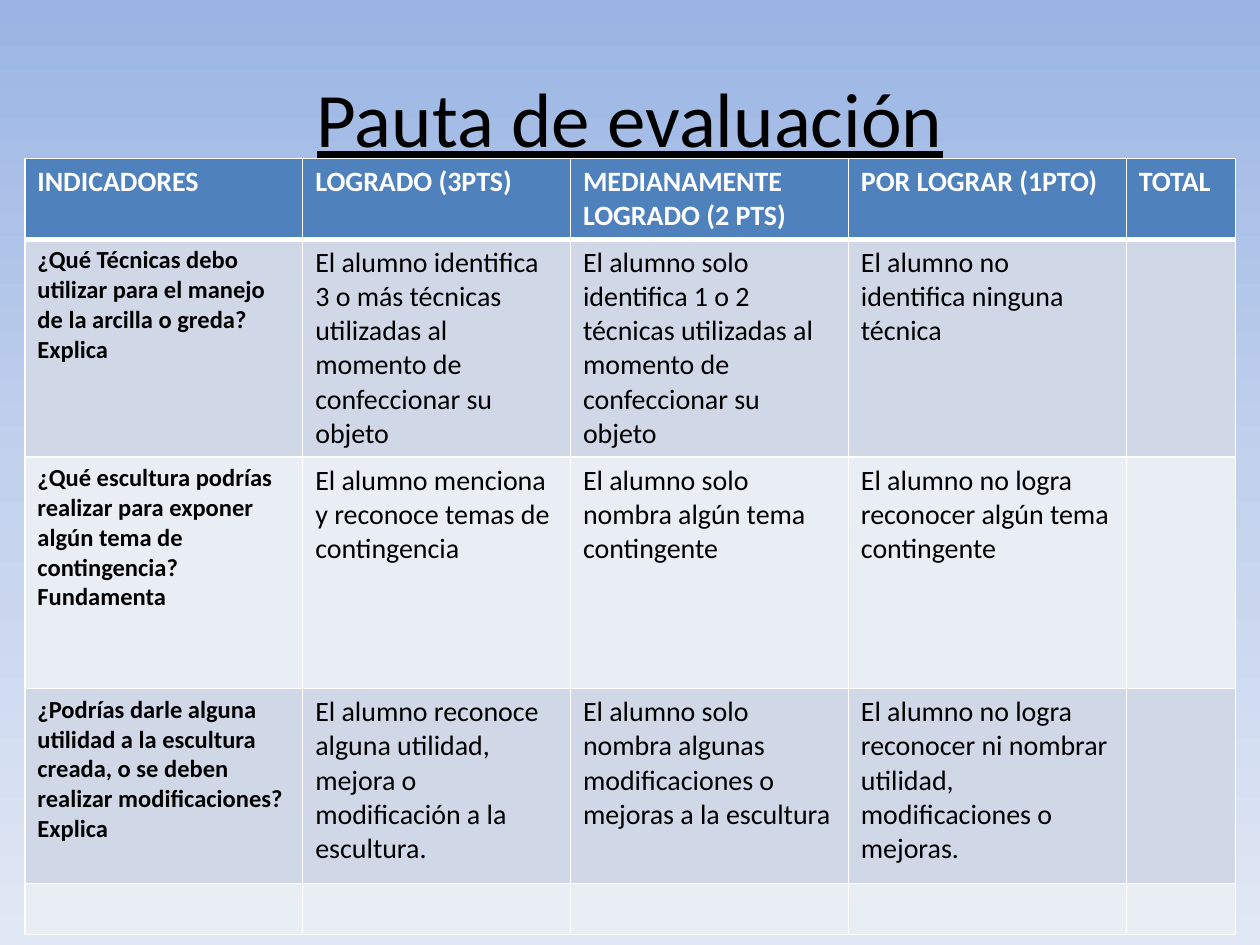
from typing import NamedTuple

from lxml import etree
from pptx import Presentation
from pptx import util as u
from pptx.dml.color import RGBColor
from pptx.enum import text
from pptx.oxml import ns

FONT = "Calibri"
WHITE, BLACK = "FFFFFF", "000000"
HEAD, DARK, LIGHT = "4F81BD", "D0D8E8", "E9EDF4"
SKY = [(0, "9AB5E4"), (50, "C2D1ED"), (100, "E1E8F5")]
COLS = [158.8, 153, 158.8, 158.8, 62.4]


class Style(NamedTuple):
    size: float
    bold: bool = False
    ink: str = BLACK
    line: bool = False


class Row(NamedTuple):
    height: float
    fill: str
    words: list[str]


TITLE = Style(44, line=True)
TOP = Style(16, True, WHITE)
ASK = Style(14, True)
BODY = Style(16)

ROWS = [
    Row(46, HEAD, ["INDICADORES", "LOGRADO (3PTS)", "MEDIANAMENTE LOGRADO (2 PTS)",
                   "POR LOGRAR (1PTO)", "TOTAL"]),
    Row(124.5, DARK, [
        "¿Qué Técnicas debo utilizar para el manejo de la arcilla o greda? Explica",
        "El alumno identifica 3 o más técnicas utilizadas al momento de confeccionar su objeto",
        "El alumno solo identifica 1 o 2 técnicas utilizadas al momento de confeccionar su objeto",
        "El alumno no identifica ninguna técnica", ""]),
    Row(132.3, LIGHT, [
        "¿Qué escultura podrías realizar para exponer algún tema de contingencia? Fundamenta",
        "El alumno menciona y reconoce temas de contingencia",
        "El alumno solo nombra algún tema contingente",
        "El alumno no logra reconocer algún tema contingente", ""]),
    Row(111.5, DARK, [
        "¿Podrías darle alguna utilidad a la escultura creada, o se deben realizar"
        " modificaciones? Explica",
        "El alumno reconoce alguna utilidad, mejora o modificación a la escultura.",
        "El alumno solo nombra algunas modificaciones o mejoras a la escultura",
        "El alumno no logra reconocer ni nombrar utilidad, modificaciones o mejoras.", ""]),
    Row(29, LIGHT, [""] * 5),
]


def color(code: str) -> RGBColor:
    return RGBColor.from_string(code)


def node(parent, tag: str, **attrs: str):
    return etree.SubElement(parent, ns.qn(tag), **attrs)


def write(para, words: str, style: Style) -> None:
    run = para.add_run()
    run.text = words
    font = run.font
    font.name, font.size = FONT, u.Pt(style.size)
    font.bold, font.underline = style.bold, style.line
    font.color.rgb = color(style.ink)


def paint(slide) -> None:
    """Fill the background with a top-down gradient."""
    fill = slide.background.fill
    fill.gradient()
    fill.gradient_angle = 270
    stops = next(slide.element.iter(ns.qn("a:gsLst")))
    stops.clear()
    for place, code in SKY:
        stop = node(stops, "a:gs", pos=str(place * 1000))
        node(stop, "a:srgbClr", val=code)


def edge(cell, side: str, width: float) -> None:
    line = node(cell._tc.get_or_add_tcPr(), f"a:ln{side}", w=str(u.Pt(width)))
    node(node(line, "a:solidFill"), "a:srgbClr", val=WHITE)


def head(slide) -> None:
    box = slide.shapes.add_textbox(u.Pt(36), u.Pt(21.6), u.Pt(648), u.Pt(90))
    frame = box.text_frame
    frame.word_wrap = True
    frame.vertical_anchor = text.MSO_ANCHOR.MIDDLE
    para = frame.paragraphs[0]
    para.alignment = text.PP_ALIGN.CENTER
    write(para, "Pauta de evaluación", TITLE)


def grid(slide) -> None:
    tall = sum(row.height for row in ROWS)
    table = slide.shapes.add_table(len(ROWS), len(COLS), u.Pt(14.2), u.Pt(90.7),
                                   u.Pt(sum(COLS)), u.Pt(tall)).table
    for col, width in zip(table.columns, COLS):
        col.width = u.Pt(width)
    for r, row in enumerate(ROWS):
        table.rows[r].height = u.Pt(row.height)
        for c, words in enumerate(row.words):
            cell = table.cell(r, c)
            # The rule under the header is thicker
            edges = {"L": 1, "R": 1, "T": 3 if r == 1 else 1, "B": 3 if r == 0 else 1}
            for side, width in edges.items():
                edge(cell, side, width)
            cell.fill.solid()
            cell.fill.fore_color.rgb = color(row.fill)
            if words:
                style = TOP if r == 0 else ASK if c == 0 else BODY
                write(cell.text_frame.paragraphs[0], words, style)


def main() -> None:
    deck = Presentation()
    deck.slide_width, deck.slide_height = u.Pt(720), u.Pt(540)
    slide = deck.slides.add_slide(deck.slide_layouts[6])
    paint(slide)
    head(slide)
    grid(slide)
    deck.save("out.pptx")


if __name__ == "__main__":
    main()
